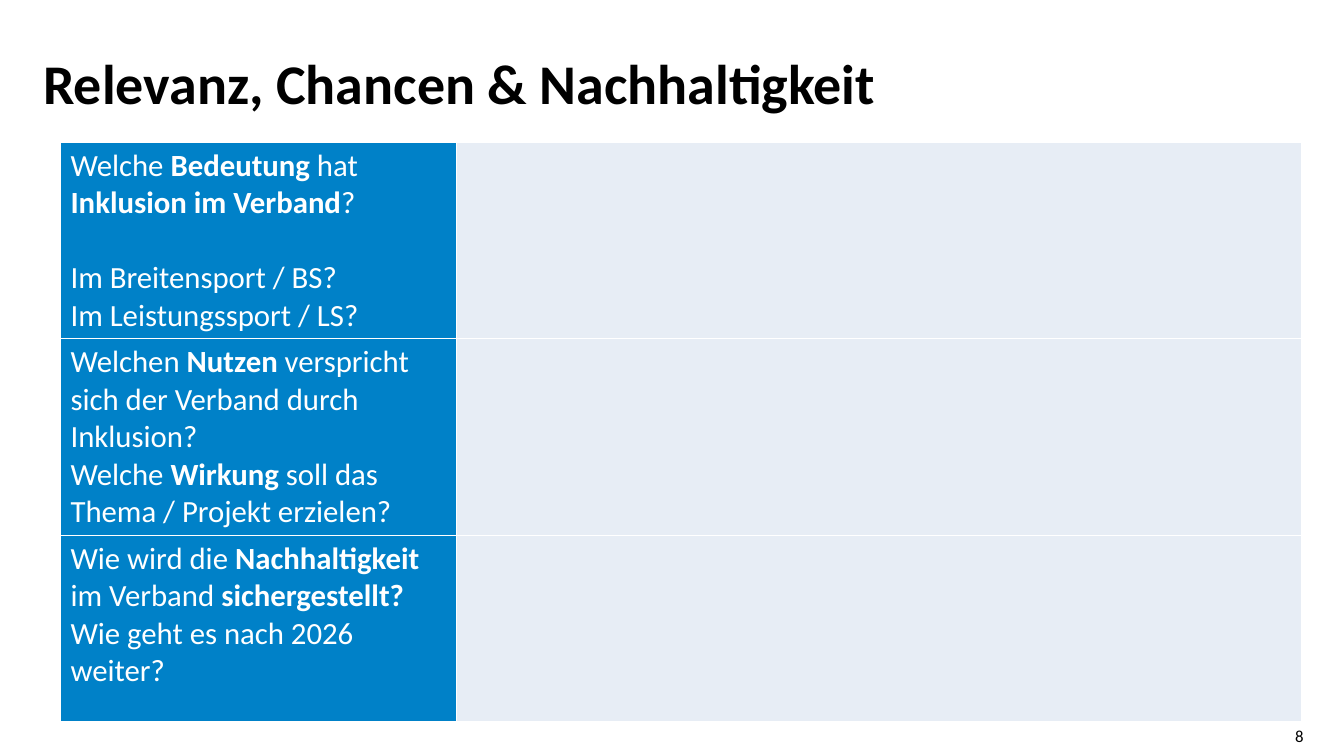
"""Build the slide on relevance, opportunities and sustainability."""
from dataclasses import dataclass

from lxml.etree import SubElement
from pptx import Presentation
from pptx.dml.color import RGBColor as Rgb
from pptx.enum.text import MSO_ANCHOR as Anchor, PP_ALIGN as Align
from pptx.oxml.ns import qn
from pptx.util import Inches, Pt

TITLE = "Relevanz, Chancen & Nachhaltigkeit"
PAGE_NUMBER = "8"
QUESTIONS = [
    [
        [("Welche ", False), ("Bedeutung", True), (" hat ", False),
         ("Inklusion im Verband", True), ("?", False)],
        [("Im Breitensport / BS?", False)],
        [("Im Leistungssport / LS?", False)],
    ],
    [
        [("Welchen ", False), ("Nutzen", True),
         (" verspricht sich der Verband durch Inklusion?", False)],
        [("Welche ", False), ("Wirkung", True),
         (" soll das Thema / Projekt erzielen?", False)],
    ],
    [
        [("Wie wird die ", False), ("Nachhaltigkeit ", True),
         ("im Verband ", False), ("sichergestellt?", True)],
        [("Wie geht es nach 2026 weiter?", False)],
    ],
]
GAP_BEFORE = {(0, 1): 26.8}
COLUMN_WIDTHS = (3.93, 8.38)
ROW_HEIGHTS = (1.95, 1.95, 1.85)


@dataclass(frozen=True)
class Theme:
    font: str = "Calibri"
    black: str = "000000"
    white: str = "FFFFFF"
    question_fill: str = "0081C8"
    answer_fill: str = "E7EDF5"
    title_size: int = 40
    question_size: int = 22
    number_size: int = 12
    border_width: int = 1


THEME = Theme()


def add_run(paragraph, text, size, color, bold=False):
    run = paragraph.add_run()
    run.text = text
    run.font.name = THEME.font
    run.font.size = Pt(size)
    run.font.bold = bold
    run.font.color.rgb = Rgb.from_string(color)


def add_label(slide, box, text, size, anchor, bold=False):
    shape = slide.shapes.add_textbox(*map(Inches, box))
    frame = shape.text_frame
    frame.word_wrap = True
    frame.vertical_anchor = anchor
    frame.margin_left = frame.margin_right = 0
    frame.margin_top = frame.margin_bottom = 0
    paragraph = frame.paragraphs[0]
    add_run(paragraph, text, size, THEME.black, bold)
    return paragraph


def style_cell(cell, color):
    properties = cell._tc.get_or_add_tcPr()
    for side in ("a:lnL", "a:lnR", "a:lnT", "a:lnB"):
        line = SubElement(properties, qn(side), w=str(Pt(THEME.border_width)))
        solid = SubElement(line, qn("a:solidFill"))
        SubElement(solid, qn("a:srgbClr"), val=THEME.white)
    cell.fill.solid()
    cell.fill.fore_color.rgb = Rgb.from_string(color)


def add_questions(slide):
    size = (sum(COLUMN_WIDTHS), sum(ROW_HEIGHTS))
    frame = slide.shapes.add_table(
        len(ROW_HEIGHTS), len(COLUMN_WIDTHS), *map(Inches, (0.6, 1.41, *size)))
    table = frame.table
    table.first_row = table.horz_banding = False
    for column, width in zip(table.columns, COLUMN_WIDTHS):
        column.width = Inches(width)
    for row_index, paragraphs in enumerate(QUESTIONS):
        table.rows[row_index].height = Inches(ROW_HEIGHTS[row_index])
        question, answer = table.rows[row_index].cells
        style_cell(question, THEME.question_fill)
        style_cell(answer, THEME.answer_fill)
        text_frame = question.text_frame
        for index, runs in enumerate(paragraphs):
            paragraph = text_frame.add_paragraph() if index else text_frame.paragraphs[0]
            if (row_index, index) in GAP_BEFORE:
                paragraph.space_before = Pt(GAP_BEFORE[row_index, index])
            for text, bold in runs:
                add_run(paragraph, text, THEME.question_size, THEME.white, bold)


def main():
    presentation = Presentation()
    presentation.slide_width = Inches(13.33)
    presentation.slide_height = Inches(7.5)
    slide = presentation.slides.add_slide(presentation.slide_layouts[6])
    number = add_label(slide, (12.46, 7.2, 0.47, 0.2), PAGE_NUMBER,
                       THEME.number_size, Anchor.MIDDLE)
    number.alignment = Align.RIGHT
    add_questions(slide)
    title = add_label(slide, (0.43, 0.56, 10, 0.85), TITLE,
                      THEME.title_size, Anchor.TOP, bold=True)
    title.line_spacing = 0.9
    presentation.save("out.pptx")


if __name__ == "__main__":
    main()
